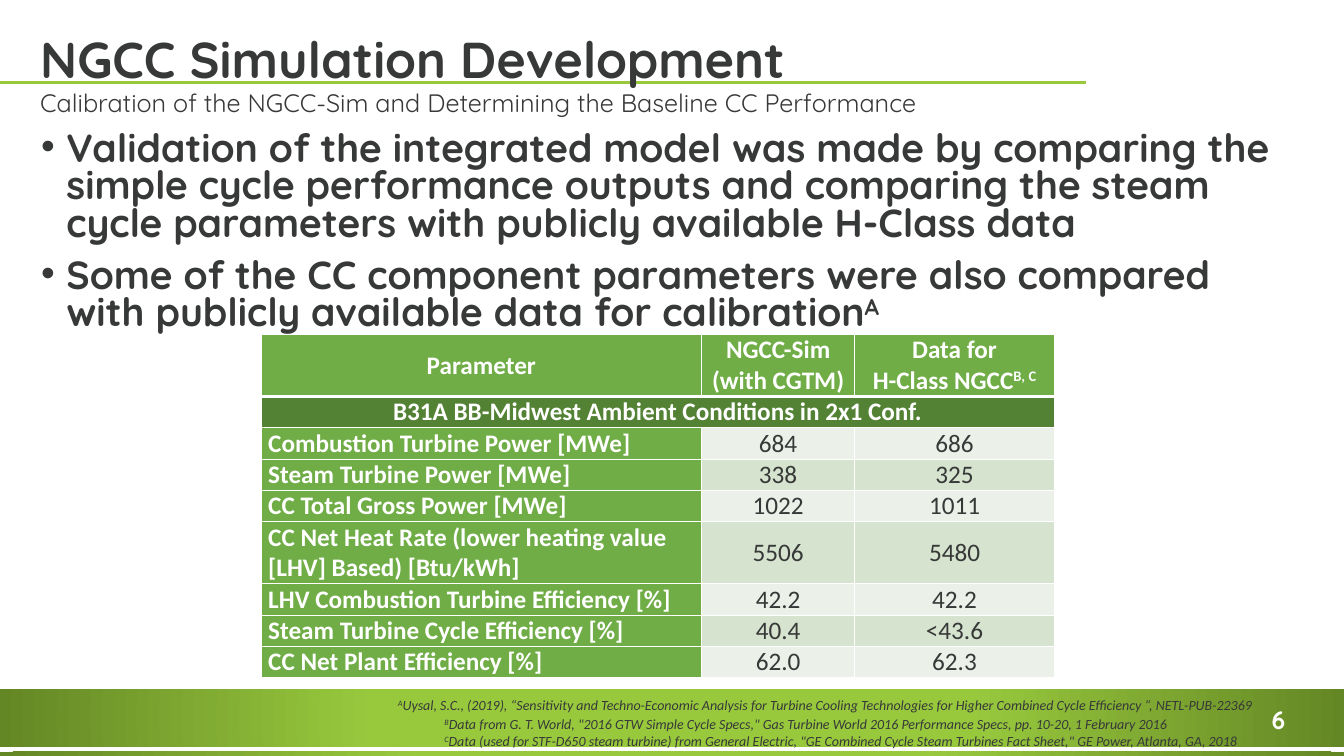
from lxml.etree import SubElement
from pptx import Presentation
from pptx.dml.color import RGBColor
from pptx.enum.shapes import MSO_CONNECTOR, MSO_SHAPE
from pptx.enum.text import MSO_ANCHOR, MSO_AUTO_SIZE, PP_ALIGN
from pptx.oxml.ns import qn
from pptx.util import Cm, Pt

LIME, OLIVE, LEAF, FOREST = "98C93D", "648725", "70AD47", "548235"
DARK, WHITE = "373838", "FFFFFF"
BANDS = ("EBF1E9", "D5E3CF")

TITLE = dict(name="Quicksand", size=Pt(36), bold=True, color=DARK)
SUBTITLE = dict(name="Quicksand", size=Pt(18), bold=False, color=DARK)
BULLET = dict(name="Quicksand", size=Pt(28), bold=True, color=DARK)
NUMBER = dict(name="Quicksand", size=Pt(18), bold=True, color=WHITE)
NOTE = dict(name="Calibri", size=Pt(10), italic=True, color=DARK)
HEAD = dict(name="Calibri", size=Pt(18), bold=True, color=WHITE)
VALUE = dict(name="Calibri", size=Pt(18), bold=False, color=DARK)

BULLETS = [
    ("Validation of the integrated model was made by comparing the simple cycle performance "
     "outputs and comparing the steam cycle parameters with publicly available H-Class data",),
    ("Some of the CC component parameters were also compared with publicly available data "
     "for calibration", "A"),
]
HEADINGS = [("Parameter",), ("NGCC-Sim\n(with CGTM)",), ("Data for\nH-Class NGCC", "B, C")]
CONDITIONS = "B31A BB-Midwest Ambient Conditions in 2x1 Conf."
RESULTS = [
    ("Combustion Turbine Power [MWe]", "684", "686"),
    ("Steam Turbine Power [MWe]", "338", "325"),
    ("CC Total Gross Power [MWe]", "1022", "1011"),
    ("CC Net Heat Rate (lower heating value [LHV] Based) [Btu/kWh]", "5506", "5480"),
    ("LHV Combustion Turbine Efficiency [%]", "42.2", "42.2"),
    ("Steam Turbine Cycle Efficiency [%]", "40.4", "<43.6"),
    ("CC Net Plant Efficiency [%]", "62.0", "62.3"),
]
TALL_ROWS = (0, 5)
NOTE_A = [("", "A", "Uysal, S.C., (2019), “Sensitivity and Techno-Economic Analysis for Turbine "
           "Cooling Technologies for Higher Combined Cycle Efficiency “, NETL-PUB-22369")]
NOTES_BC = [
    ("", "B", "Data from G. T. World, \"2016 GTW Simple Cycle Specs,\" Gas Turbine World 2016 "
     "Performance Specs, pp. 10-20, 1 February 2016"),
    ("", "C", "Data (used for STF-D650 steam turbine) from General Electric, \"GE Combined Cycle "
     "Steam Turbines Fact Sheet,\" GE Power, Atlanta, GA, 2018"),
]


def rgb(value):
    """Turn a hex string into a colour."""
    return RGBColor.from_string(value)


def add_runs(p, parts, fmt):
    """Add parts to a paragraph, every second one as superscript."""
    for i, part in enumerate(parts):
        for j, line in enumerate(part.split("\n")):
            if j:
                p.add_line_break()
            if not line:
                continue
            r = p.add_run()
            r.text = line
            for key, value in fmt.items():
                if key == "color":
                    r.font.color.rgb = rgb(value)
                else:
                    setattr(r.font, key, value)
            if i % 2:
                r._r.get_or_add_rPr().set("baseline", "30000")


def write(tf, paragraphs, fmt, **layout):
    """Fill a text frame with paragraphs that share one format."""
    for i, parts in enumerate(paragraphs):
        p = tf.add_paragraph() if i else tf.paragraphs[0]
        for key, value in layout.items():
            setattr(p, key, value)
        if not i:
            p.space_before = Pt(0)
        add_runs(p, parts, fmt)


def place(sp, x, y, w, h):
    """Move and size a shape, in centimetres."""
    for key, value in dict(left=x, top=y, width=w, height=h).items():
        setattr(sp, key, Cm(value))


def set_bullet(p, char):
    """Give a paragraph a hanging bullet, or none."""
    pPr = p._p.get_or_add_pPr()
    pPr.set("marL", str(Cm(0.66) if char else 0))
    pPr.set("indent", str(-Cm(0.64) if char else 0))
    if char:
        SubElement(pPr, qn("a:buFont"), typeface="Arial")
        SubElement(pPr, qn("a:buChar"), char=char)
    else:
        SubElement(pPr, qn("a:buNone"))


def placeholder(sp, box, paragraphs, fmt, anchor, spacing, char=None):
    """Place a template placeholder and fill it with text."""
    place(sp, *box)
    tf = sp.text_frame
    tf.auto_size, tf.vertical_anchor = MSO_AUTO_SIZE.NONE, anchor
    write(tf, paragraphs, fmt, alignment=PP_ALIGN.LEFT, line_spacing=spacing, space_before=Pt(10))
    for p in tf.paragraphs:
        set_bullet(p, char)


def glow_bar(s, x, y, w, h, start):
    """Draw a bar that darkens from its centre outwards."""
    sp = s.shapes.add_shape(MSO_SHAPE.RECTANGLE, Cm(x), Cm(y), Cm(w), Cm(h))
    sp.shadow.inherit = False
    sp.line.fill.background()
    sp.fill.gradient()
    for stop, color, position in zip(sp.fill.gradient_stops, (LIME, OLIVE), (start, 1)):
        stop.color.rgb, stop.position = rgb(color), position
    grad = sp._element.spPr.find(qn("a:gradFill"))
    grad.remove(grad.find(qn("a:lin")))
    circle = SubElement(grad, qn("a:path"), path="circle")
    SubElement(circle, qn("a:fillToRect"), l="50000", t="50000", r="50000", b="50000")


def text_box(s, x, y, w, h, paragraphs, fmt, wrap=True):
    """Add a text box."""
    tf = s.shapes.add_textbox(Cm(x), Cm(y), Cm(w), Cm(h)).text_frame
    tf.word_wrap = wrap
    write(tf, paragraphs, fmt)


def header(s, x, y, w):
    """Place the title, its rule and the subtitle."""
    rule = s.shapes.add_connector(MSO_CONNECTOR.STRAIGHT, 0, Cm(y + 1.37), Cm(27.38), Cm(y + 1.37))
    rule.line.color.rgb, rule.line.width = rgb(LIME), Pt(1.75)
    SubElement(rule._element.spPr, qn("a:effectLst"))
    s.shapes._spTree.insert(2, rule._element)
    title, subtitle = s.placeholders[0], s.placeholders[1]
    placeholder(title, (x, y, w, 1.68), [("NGCC Simulation Development",)], TITLE,
                MSO_ANCHOR.BOTTOM, 0.9)
    placeholder(subtitle, (x, y + 1.45, w, 1.04),
                [("Calibration of the NGCC-Sim and Determining the Baseline CC Performance",)],
                SUBTITLE, MSO_ANCHOR.TOP, 0.9)


def footer(s, x, y, w):
    """Place the green bars, the sources and the slide number."""
    glow_bar(s, x, y, w, 1.45, 0.44)
    glow_bar(s, x, y + 1.57, w, 0.13, 0.37)
    text_box(s, x + 31.8, y + 0.26, 1.22, 1.02, [("6",)], NUMBER, wrap=False)
    text_box(s, x + 10.95, y + 0.54, 23.29, 1.12, NOTES_BC, NOTE)
    text_box(s, x + 9.78, y + 0.05, 22.89, 0.69, NOTE_A, NOTE)


def fill_cell(cell, parts, fmt, color, align, bottom=1):
    """Fill a table cell and give it white borders."""
    cell.fill.solid()
    cell.fill.fore_color.rgb = rgb(color)
    cell.vertical_anchor = MSO_ANCHOR.MIDDLE
    for side, margin in dict(left=0.18, right=0.18, top=0, bottom=0).items():
        setattr(cell, f"margin_{side}", Cm(margin))
    write(cell.text_frame, [parts], fmt, alignment=align)
    tcPr = cell._tc.get_or_add_tcPr()
    for i, (tag, width) in enumerate(dict(lnL=1, lnR=1, lnT=1, lnB=bottom).items()):
        ln = SubElement(tcPr, qn(f"a:{tag}"), w=str(Pt(width)))
        SubElement(SubElement(ln, qn("a:solidFill")), qn("a:srgbClr"), val=WHITE)
        tcPr.insert(i, ln)


def results_table(s, x, y, widths):
    """Place the table that compares the simulation with public data."""
    heights = [1.56 if i in TALL_ROWS else 0.79 for i in range(len(RESULTS) + 2)]
    table = s.shapes.add_table(len(heights), len(widths), Cm(x), Cm(y),
                               Cm(sum(widths)), Cm(sum(heights))).table
    table.first_row = table.horz_banding = False
    for col, width in zip(table.columns, widths):
        col.width = Cm(width)
    for row, height in zip(table.rows, heights):
        row.height = Cm(height)
    for c, parts in enumerate(HEADINGS):
        fill_cell(table.cell(0, c), parts, HEAD, LEAF, PP_ALIGN.CENTER, 3)
    table.cell(1, 0).merge(table.cell(1, 2))
    fill_cell(table.cell(1, 0), (CONDITIONS,), HEAD, FOREST, PP_ALIGN.CENTER)
    for i, (label, *values) in enumerate(RESULTS):
        fill_cell(table.cell(i + 2, 0), (label,), HEAD, LEAF, PP_ALIGN.LEFT)
        for c, value in enumerate(values, 1):
            fill_cell(table.cell(i + 2, c), (value,), VALUE, BANDS[i % 2], PP_ALIGN.CENTER)


def main():
    """Build the slide and save it."""
    prs = Presentation()
    prs.slide_width, prs.slide_height = Cm(33.87), Cm(19.05)
    s = prs.slides.add_slide(prs.slide_layouts[3])
    header(s, 0.76, 0.71, 32.18)
    placeholder(s.placeholders[2], (0.76, 3.2, 32.18, 5.56), BULLETS, BULLET,
                MSO_ANCHOR.TOP, 0.8, "•")
    footer(s, 0, 17.37, 33.87)
    results_table(s, 6.58, 8.43, (11.1, 3.86, 5.03))
    prs.save("out.pptx")


if __name__ == "__main__":
    main()
